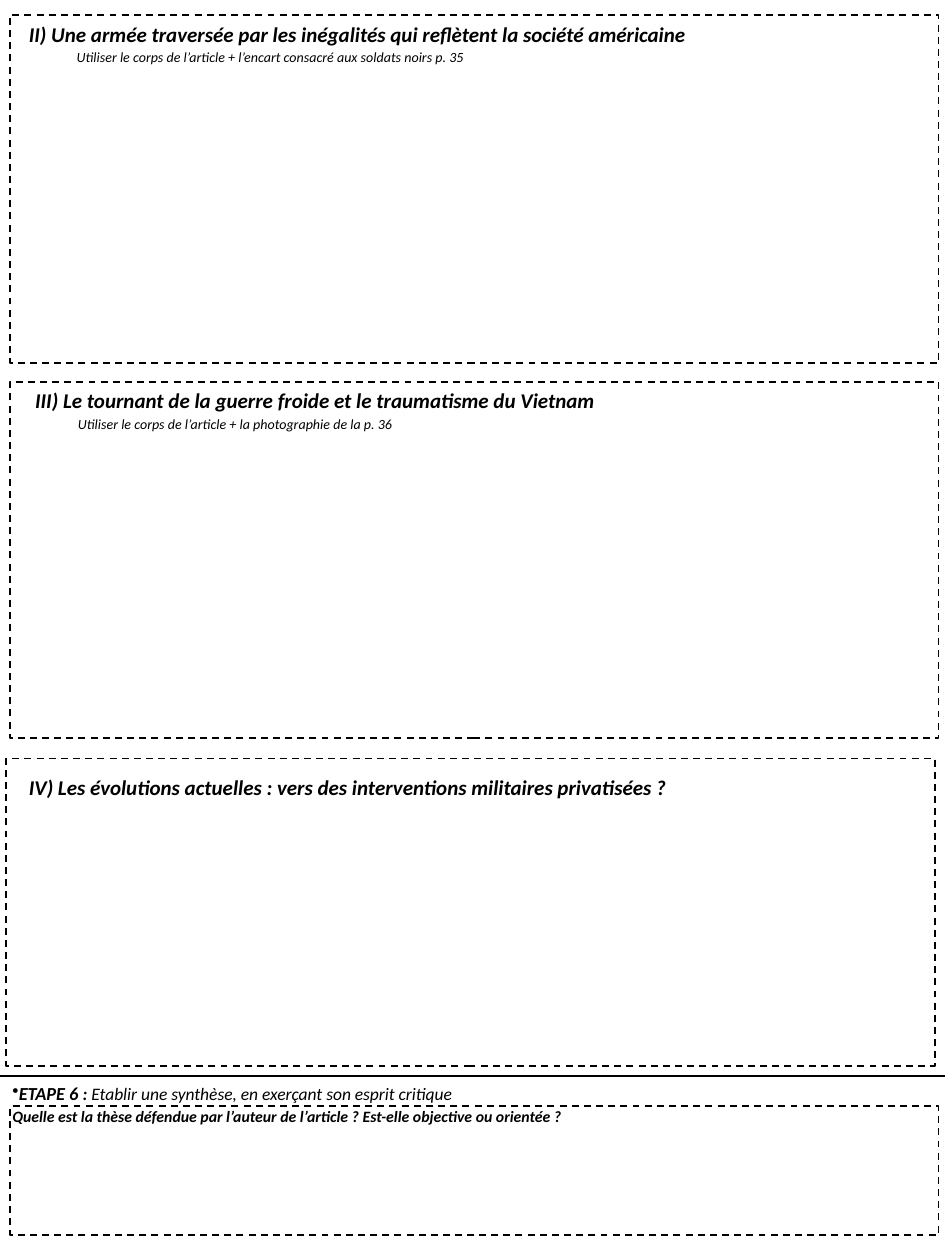
from lxml import etree
from pptx import Presentation
from pptx.dml.color import RGBColor
from pptx.enum.dml import MSO_LINE
from pptx.enum.shapes import MSO_CONNECTOR, MSO_SHAPE
from pptx.enum.text import MSO_ANCHOR, PP_ALIGN
from pptx.oxml.ns import qn
from pptx.util import Inches, Pt

BLACK = RGBColor(0x00, 0x00, 0x00)
WHITE = RGBColor(0xFF, 0xFF, 0xFF)
FONT = "Calibri"
DASH = MSO_LINE.DASH
RECTANGLE = MSO_SHAPE.RECTANGLE
STRAIGHT = MSO_CONNECTOR.STRAIGHT
TOP = MSO_ANCHOR.TOP
LEFT = PP_ALIGN.LEFT

PAGE_WIDTH = 7.5
FRAME_WIDTH = 7.37
STEP_TOP = 8.54


def add_rectangle(slide, left, top, width, height):
    rectangle = slide.shapes.add_shape(
        RECTANGLE, Inches(left), Inches(top), Inches(width), Inches(height))
    rectangle.shadow.inherit = False
    return rectangle


def add_answer_frame(slide, left, top, height):
    frame = add_rectangle(slide, left, top, FRAME_WIDTH, height)
    frame.fill.background()
    frame.line.color.rgb = BLACK
    frame.line.width = Pt(1)
    frame.line.dash_style = DASH


def add_run(paragraph, text, size, bold):
    run = paragraph.add_run()
    run.text = text
    run.font.name = FONT
    run.font.size = Pt(size)
    run.font.bold = bold
    run.font.italic = True
    run.font.color.rgb = BLACK


def set_indent(paragraph, indent):
    properties = paragraph._p.get_or_add_pPr()
    properties.set("marL", str(Inches(indent)))
    properties.set("indent", "0")


def add_section_heading(slide, left, top, width, title, hint="", title_indent=0):
    height = 0.47 if hint else 0.3
    heading = slide.shapes.add_textbox(
        Inches(left), Inches(top), Inches(width), Inches(height))
    text_frame = heading.text_frame
    text_frame.word_wrap = True
    title_line = text_frame.paragraphs[0]
    set_indent(title_line, title_indent)
    add_run(title_line, title, 12, True)
    if hint:
        hint_line = text_frame.add_paragraph()
        set_indent(hint_line, 0.38)
        hint_line.space_before = Pt(1.2)
        add_run(hint_line, hint, 8, False)


def add_synthesis_step(slide):
    step = add_rectangle(slide, 0, STEP_TOP, PAGE_WIDTH, 10 - STEP_TOP)
    step.fill.solid()
    step.fill.fore_color.rgb = WHITE
    step.line.fill.background()
    text_frame = step.text_frame
    text_frame.word_wrap = True
    text_frame.vertical_anchor = TOP

    instruction = text_frame.paragraphs[0]
    instruction.alignment = LEFT
    set_indent(instruction, 0)
    bullet = etree.SubElement(instruction._p.get_or_add_pPr(), qn("a:buChar"))
    bullet.set("char", "•")
    add_run(instruction, "ETAPE 6 ", 10.5, True)
    add_run(instruction, ": ", 10, True)
    add_run(instruction, "Etablir une synthèse, en exerçant son esprit critique", 10, False)

    question = text_frame.add_paragraph()
    question.alignment = LEFT
    question.space_before = Pt(1.2)
    add_run(question, "Quelle est la thèse défendue par l’auteur de l’article ? "
            "Est-elle objective ou orientée ?", 9, True)


def add_separator(slide):
    separator = slide.shapes.add_connector(
        STRAIGHT, Inches(0), Inches(STEP_TOP), Inches(PAGE_WIDTH), Inches(STEP_TOP))
    separator.line.color.rgb = BLACK
    separator.line.width = Pt(1)
    etree.SubElement(separator._element.spPr, qn("a:effectLst"))


def main():
    presentation = Presentation()
    presentation.slide_width = Inches(PAGE_WIDTH)
    presentation.slide_height = Inches(10)
    slide = presentation.slides.add_slide(presentation.slide_layouts[6])

    add_answer_frame(slide, 0.08, 3.03, 2.83)
    add_answer_frame(slide, 0.05, 6.02, 2.44)
    add_synthesis_step(slide)
    add_answer_frame(slide, 0.08, 8.78, 1.02)
    add_section_heading(
        slide, 0.13, 6.1, 5.62,
        "IV) Les évolutions actuelles : vers des interventions militaires privatisées ?")
    add_section_heading(
        slide, 0.14, 3.03, 6.13,
        "III) Le tournant de la guerre froide et le traumatisme du Vietnam",
        "Utiliser le corps de l’article + la photographie de la p. 36",
        title_indent=0.04)
    add_section_heading(
        slide, 0.13, 0.12, 6.05,
        "II) Une armée traversée par les inégalités qui reflètent la société américaine",
        "Utiliser le corps de l’article + l’encart consacré aux soldats noirs p. 35")
    add_answer_frame(slide, 0.08, 0.12, 2.76)
    add_separator(slide)

    presentation.save("out.pptx")


if __name__ == "__main__":
    main()
